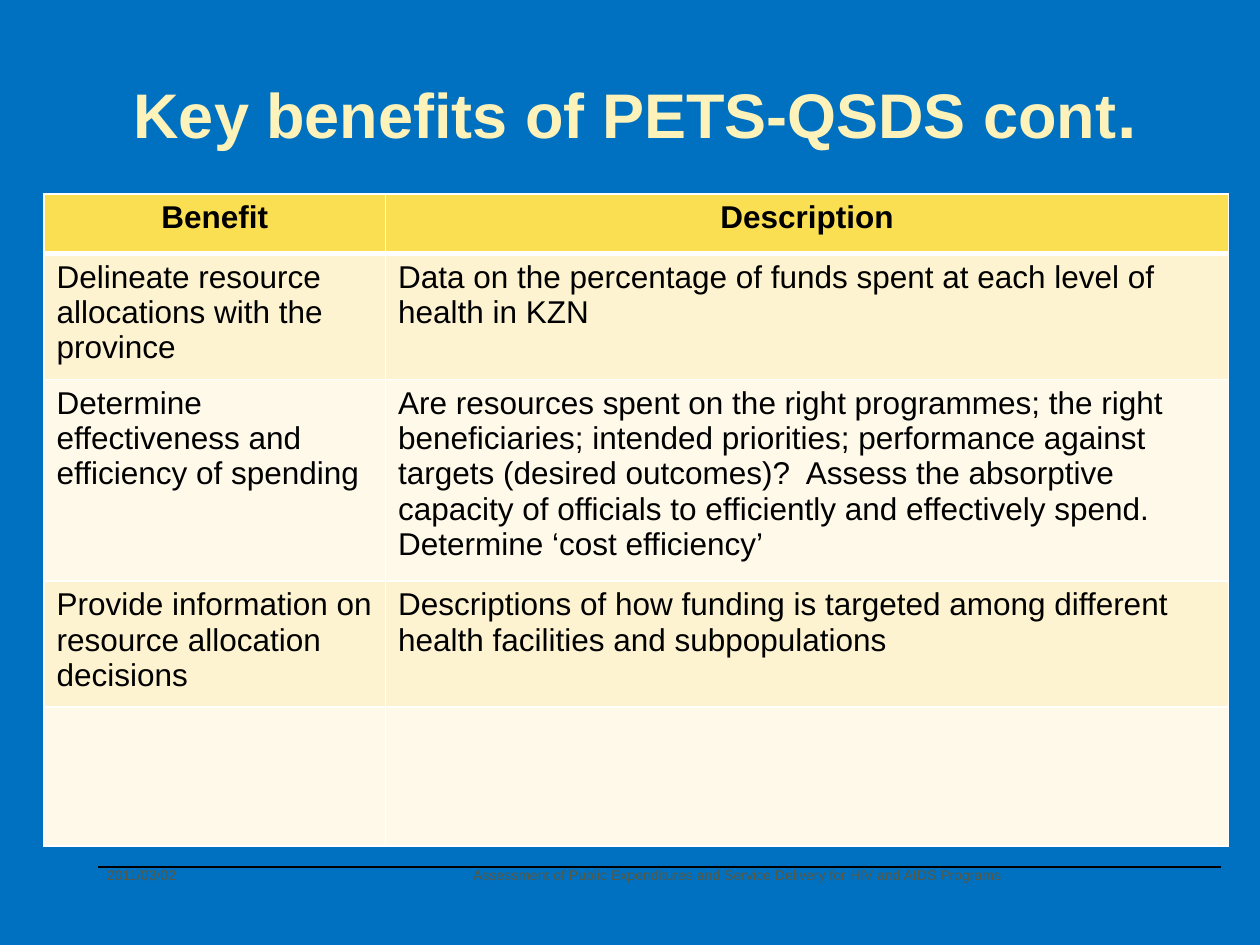
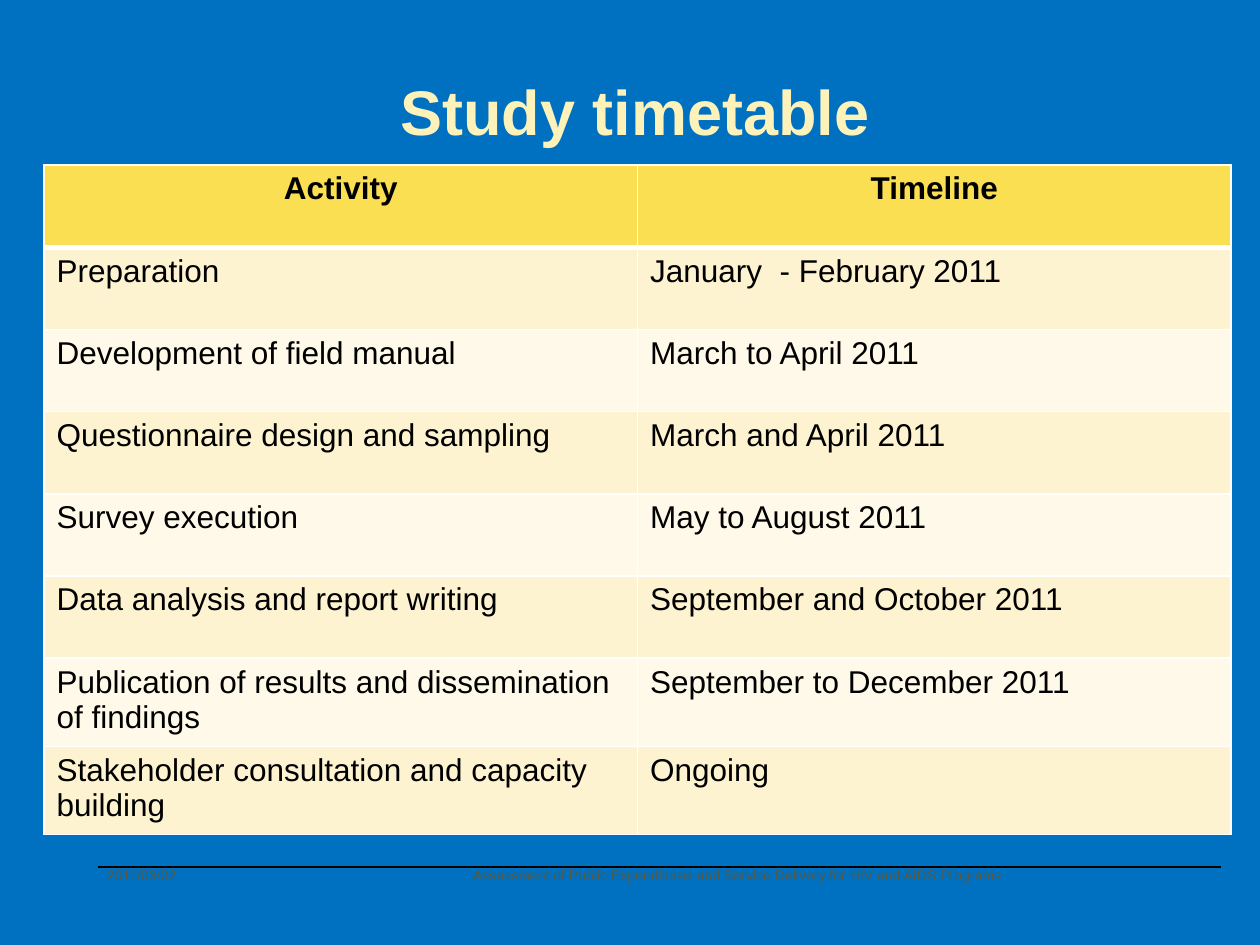
from dataclasses import dataclass

from lxml import etree
from pptx import Presentation
from pptx.dml.color import RGBColor
from pptx.enum.shapes import MSO_CONNECTOR
from pptx.enum.text import MSO_ANCHOR, PP_ALIGN
from pptx.oxml.ns import qn
from pptx.util import Inches, Pt

LEFT, CENTER = PP_ALIGN.LEFT, PP_ALIGN.CENTER
TOP, MIDDLE = MSO_ANCHOR.TOP, MSO_ANCHOR.MIDDLE
STRAIGHT = MSO_CONNECTOR.STRAIGHT
BLANK = 6


@dataclass(frozen=True)
class Theme:
    font: str = "Arial"
    background: str = "0070C0"
    title: str = "FDF2BA"
    text: str = "000000"
    footer: str = "595841"
    rule: str = "000000"
    header: str = "FBDF53"
    bands: tuple = ("FDF3D1", "FEF9E9")
    border: str = "FFFFFF"
    title_size: float = 36
    title_large: float = 40
    table_size: float = 18
    footer_size: float = 8
    rule_width: float = 0.75
    border_width: float = 1
    header_border: float = 3


@dataclass(frozen=True)
class Box:
    x: float
    y: float
    w: float
    h: float

    def emu(self):
        return [grid(v) for v in (self.x, self.y, self.w, self.h)]


THEME = Theme()
WIDTH, HEIGHT = Inches(10), Inches(7.5)
COLUMNS = 100
TITLE = Box(3.3, 2.5, 94.2, 12.5)
FOOTER = Box(7.5, 68.3, 90.1, 5)
BENEFITS = Box(3.5, 15.4, 94, 51.2)
TIMETABLE = Box(3.5, 13.1, 94.2, 52.2)

DATE = "2011/03/02"
PROGRAMME = (
    "Assessment of Public Expenditures and Service Delivery "
    "for HIV and AIDS Programs"
)
BENEFIT_ROWS = [
    ("Benefit", "Description"),
    (
        "Delineate resource allocations with the province",
        "Data on the percentage of funds spent at each level of health in KZN",
    ),
    (
        "Determine effectiveness and efficiency of spending",
        "Are resources spent on the right programmes; the right beneficiaries; "
        "intended priorities; performance against targets (desired outcomes)?  "
        "Assess the absorptive capacity of officials to efficiently and "
        "effectively spend. Determine ‘cost efficiency’",
    ),
    (
        "Provide information on resource allocation decisions",
        "Descriptions of how funding is targeted among different health "
        "facilities and subpopulations",
    ),
    ("", ""),
]
TIMETABLE_ROWS = [
    ("Activity", "Timeline"),
    ("Preparation", "January  - February 2011"),
    ("Development of field manual", "March to April 2011"),
    ("Questionnaire design and sampling", "March and April 2011"),
    ("Survey execution", "May to August 2011"),
    ("Data analysis and report writing", "September and October 2011"),
    (
        "Publication of results and dissemination of findings",
        "September to December 2011",
    ),
    ("Stakeholder consultation and capacity building", "Ongoing"),
]


def grid(units):
    return round(units * WIDTH / COLUMNS)


def rgb(value):
    return RGBColor.from_string(value)


def write(tf, text, size, color=THEME.text, bold=False, align=LEFT):
    p = tf.paragraphs[0]
    p.alignment = align
    r = p.add_run()
    r.text = text
    r.font.name = THEME.font
    r.font.size = Pt(size)
    r.font.bold = bold
    r.font.color.rgb = rgb(color)


def text_frame(s, box, anchor=TOP):
    tf = s.shapes.add_textbox(*box.emu()).text_frame
    tf.word_wrap = True
    tf.vertical_anchor = anchor
    return tf


def add_rule(s, start, end, y):
    line = s.shapes.add_connector(STRAIGHT, grid(start), grid(y), grid(end), grid(y))
    line.line.color.rgb = rgb(THEME.rule)
    line.line.width = Pt(THEME.rule_width)
    etree.SubElement(line._element.spPr, qn("a:effectLst"))


def add_footer(s, box):
    style = {"size": THEME.footer_size, "color": THEME.footer}
    date = Box(box.x, box.y, 20.8, box.h)
    caption = Box(box.x + 12, box.y, box.w - 12, box.h)
    write(text_frame(s, date), DATE, **style)
    write(text_frame(s, caption), PROGRAMME, align=CENTER, **style)
    for start, end in ((13.6, 89.4), (0.3, 17.5)):
        add_rule(s, box.x + start, box.x + end, box.y + 0.5)


def add_title(s, box, text, large_tail=""):
    tf = text_frame(s, box, MIDDLE)
    style = {"color": THEME.title, "bold": True, "align": CENTER}
    write(tf, text, THEME.title_size, **style)
    if large_tail:
        write(tf, large_tail, THEME.title_large, **style)


def set_borders(cell, top, bottom):
    props = cell._tc.get_or_add_tcPr()
    side = THEME.border_width
    widths = {"lnL": side, "lnR": side, "lnT": top, "lnB": bottom}
    for tag, width in widths.items():
        ln = etree.SubElement(props, qn(f"a:{tag}"), w=str(Pt(width)))
        fill = etree.SubElement(ln, qn("a:solidFill"))
        etree.SubElement(fill, qn("a:srgbClr"), val=THEME.border)


def format_cell(cell, text, row):
    is_header = row == 0
    thin, thick = THEME.border_width, THEME.header_border
    set_borders(cell, thick if row == 1 else thin, thick if is_header else thin)
    cell.fill.solid()
    cell.fill.fore_color.rgb = rgb(
        THEME.header if is_header else THEME.bands[(row - 1) % 2]
    )
    if text:
        write(
            cell.text_frame,
            text,
            THEME.table_size,
            bold=is_header,
            align=CENTER if is_header else LEFT,
        )


def share(total, weights):
    return [grid(total * weight / sum(weights)) for weight in weights]


def add_table(s, box, rows, col_weights, row_weights):
    table = s.shapes.add_table(len(rows), len(rows[0]), *box.emu()).table
    for column, width in zip(table.columns, share(box.w, col_weights)):
        column.width = width
    for row, height in zip(table.rows, share(box.h, row_weights)):
        row.height = height
    for i, texts in enumerate(rows):
        for j, text in enumerate(texts):
            format_cell(table.cell(i, j), text, i)


def add_slide(prs):
    s = prs.slides.add_slide(prs.slide_layouts[BLANK])
    add_footer(s, FOOTER)
    return s


def benefits_slide(prs):
    s = add_slide(prs)
    add_title(s, TITLE, "Key benefits of PETS-QSDS cont", large_tail=".")
    add_table(s, BENEFITS, BENEFIT_ROWS, (2.71, 6.69), (0.47, 0.98, 1.58, 0.98, 1.1))


def timetable_slide(prs):
    s = add_slide(prs)
    add_title(s, TITLE, "Study timetable")
    add_table(s, TIMETABLE, TIMETABLE_ROWS, (1, 1), [1] * len(TIMETABLE_ROWS))


def main():
    prs = Presentation()
    prs.slide_width, prs.slide_height = WIDTH, HEIGHT
    fill = prs.slide_master.background.fill
    fill.solid()
    fill.fore_color.rgb = rgb(THEME.background)
    benefits_slide(prs)
    timetable_slide(prs)
    prs.save("out.pptx")


if __name__ == "__main__":
    main()
